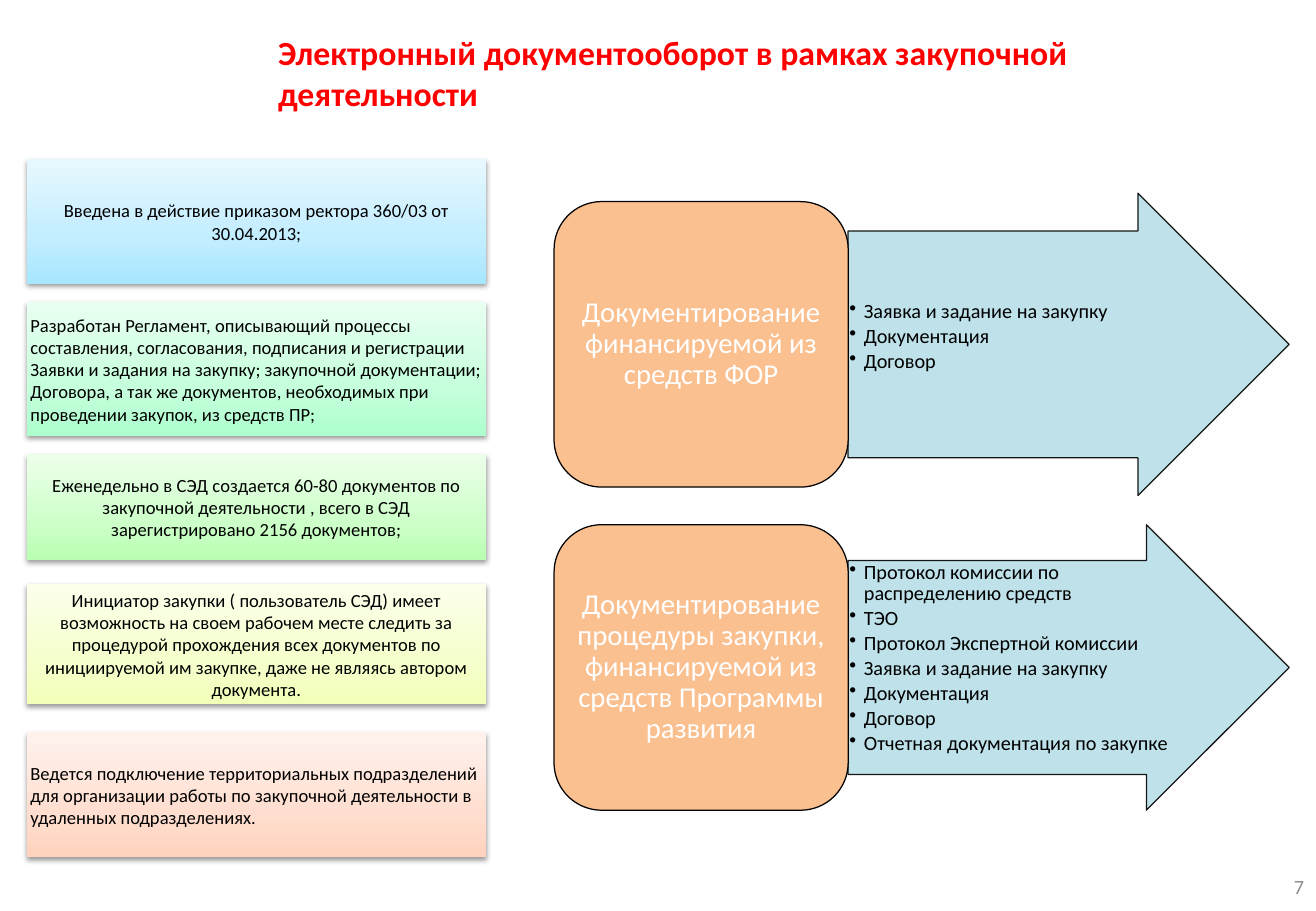
from dataclasses import dataclass

from lxml.etree import SubElement
from pptx import Presentation
from pptx.dml.color import RGBColor
from pptx.enum.shapes import MSO_SHAPE
from pptx.enum.text import MSO_ANCHOR, PP_ALIGN
from pptx.oxml.ns import qn
from pptx.util import Inches, Pt


@dataclass(frozen=True)
class Theme:
    font: str = "Calibri"
    title: str = "FF0000"
    ink: str = "000000"
    number: str = "8C8C8C"
    stage: str = "FAC090"
    stage_text: str = "FFFFFF"
    arrow: str = "B7DEE8"
    title_size: float = 20
    stage_size: float = 17
    small_size: float = 12
    card_size: float = 11


THEME = Theme()

# Gradient colours from the bottom of a card to its top
BLUE = ("A7E6FF", "C1EDFF", "E7F8FF")
MINT = ("ADFFCD", "C5FFDB", "E9FFF1")
GREEN = ("B9FFB2", "CDFFC9", "ECFFEA")
YELLOW = ("F1FFB8", "F5FFCC", "FBFFEC")
PEACH = ("FFD2BD", "FFDED0", "FFF2ED")

# Top, height, gradient, alignment, paragraphs
CARDS = [
    (1.31, 1.03, BLUE, PP_ALIGN.CENTER,
     ["Введена в действие приказом ректора 360/03 от 30.04.2013;"]),
    (2.49, 1.1, MINT, PP_ALIGN.LEFT,
     ["Разработан Регламент, описывающий процессы составления, согласования, "
      "подписания и регистрации Заявки и задания на закупку; закупочной документации;",
      "Договора, а так же документов, необходимых при проведении закупок, из средств ПР;"]),
    (3.74, 0.87, GREEN, PP_ALIGN.CENTER,
     ["Еженедельно в СЭД создается 60-80 документов по закупочной деятельности , "
      "всего в СЭД зарегистрировано 2156 документов;"]),
    (4.81, 0.99, YELLOW, PP_ALIGN.CENTER,
     ["Инициатор закупки ( пользователь СЭД) имеет возможность на своем рабочем месте "
      "следить за процедурой прохождения всех документов по инициируемой им закупке, "
      "даже не являясь автором документа."]),
    (6.03, 1.03, PEACH, PP_ALIGN.LEFT,
     ["Ведется подключение территориальных подразделений для организации работы по "
      "закупочной деятельности в удаленных подразделениях."]),
]

# Arrow top, arrow height, space above the list, stage text, documents
STAGES = [
    (1.59, 2.49, 0.58, "Документирование финансируемой из средств ФОР",
     ["Заявка и задание на закупку", "Документация", "Договор"]),
    (4.32, 2.35, 0.01,
     "Документирование процедуры закупки, финансируемой из средств Программы развития",
     ["Протокол комиссии по распределению средств", "ТЭО",
      "Протокол Экспертной комиссии", "Заявка и задание на закупку",
      "Документация", "Договор", "Отчетная документация по закупке"]),
]


def write(shape, paragraphs, *, size, color, bold=False, align=PP_ALIGN.LEFT,
          anchor=MSO_ANCHOR.MIDDLE, insets=(0.1, 0.05, 0.1, 0.05),
          spacing=None, after=None, bullet_indent=None):
    frame = shape.text_frame
    frame.word_wrap = True
    frame.vertical_anchor = anchor
    (frame.margin_left, frame.margin_top,
     frame.margin_right, frame.margin_bottom) = map(Inches, insets)
    for index, text in enumerate(paragraphs):
        paragraph = frame.add_paragraph() if index else frame.paragraphs[0]
        if bullet_indent:
            properties = paragraph._p.get_or_add_pPr()
            properties.set("marL", str(Inches(bullet_indent)))
            properties.set("indent", str(-Inches(bullet_indent)))
            SubElement(properties, qn("a:buChar"), char="•")
        paragraph.alignment = align
        if spacing:
            paragraph.line_spacing = spacing
        if after:
            paragraph.space_after = Pt(after)
        run = paragraph.add_run()
        run.text = text
        run.font.name = THEME.font
        run.font.size = Pt(size)
        run.font.bold = bold
        run.font.color.rgb = RGBColor.from_string(color)


def add_text(slide, box, text, **style):
    write(slide.shapes.add_textbox(*map(Inches, box)), [text], **style)


def add_block(slide, kind, box, fill=None):
    block = slide.shapes.add_shape(kind, *map(Inches, box))
    block.shadow.inherit = False
    if fill:
        block.fill.solid()
        block.fill.fore_color.rgb = RGBColor.from_string(fill)
        block.line.color.rgb = RGBColor.from_string(THEME.ink)
        block.line.width = Pt(0.75)
    else:
        block.fill.background()
        block.line.fill.background()
    return block


def add_color(parent, color, alpha=None):
    element = SubElement(parent, qn("a:srgbClr"), val=color)
    if alpha:
        SubElement(element, qn("a:alpha"), val=str(alpha * 1000))


def add_card(slide, box, gradient, align, paragraphs):
    card = add_block(slide, MSO_SHAPE.RECTANGLE, box)
    properties = card._element.spPr

    # Three-stop gradient rising from the bottom
    no_fill = properties.find(qn("a:noFill"))
    fill = SubElement(properties, qn("a:gradFill"), rotWithShape="1")
    stops = SubElement(fill, qn("a:gsLst"))
    for position, color in zip((0, 35, 100), gradient):
        add_color(SubElement(stops, qn("a:gs"), pos=str(position * 1000)), color)
    SubElement(fill, qn("a:lin"), ang=str(270 * 60000), scaled="1")
    properties.replace(no_fill, fill)

    # Soft shadow straight below
    shadow = SubElement(properties.find(qn("a:effectLst")), qn("a:outerShdw"),
                        blurRad=str(Pt(3.1)), dist=str(Pt(1.6)),
                        dir=str(90 * 60000), rotWithShape="0")
    add_color(shadow, THEME.ink, 38)

    write(card, paragraphs, size=THEME.card_size, color=THEME.ink, align=align,
          insets=(0.03,) * 4)


def add_stage(slide, box, list_gap, stage_text, documents):
    left, top, width, height = box
    stage_width, stage_height = 2.42, 2.35

    # Arrow with the list of documents
    arrow = add_block(slide, MSO_SHAPE.RIGHT_ARROW,
                      (left + stage_width, top, width - stage_width, height), THEME.arrow)
    arrow.adjustments[0] = 0.75
    arrow.adjustments[1] = 0.5
    for color in arrow._element.spPr.iter(qn("a:srgbClr")):
        SubElement(color, qn("a:alpha"), val="90000")
    write(arrow, documents, size=THEME.small_size, color=THEME.ink,
          anchor=MSO_ANCHOR.TOP, insets=(0.01, list_gap, 0.01, 0.01),
          spacing=0.9, after=1.8, bullet_indent=0.12)

    # Rounded stage block, centred on the arrow
    stage = add_block(slide, MSO_SHAPE.ROUNDED_RECTANGLE,
                      (left, top + (height - stage_height) / 2, stage_width, stage_height),
                      THEME.stage)
    write(stage, [stage_text], size=THEME.stage_size, color=THEME.stage_text,
          align=PP_ALIGN.CENTER, insets=(0.07, 0.04, 0.07, 0.04), spacing=0.9)


def main():
    deck = Presentation()
    deck.slide_width, deck.slide_height = Inches(10.83), Inches(7.5)
    slide = deck.slides.add_slide(deck.slide_layouts[6])

    # Title and slide number
    add_text(slide, (2.19, 0.05, 7.56, 1.27),
             "Электронный документооборот в рамках закупочной деятельности",
             size=THEME.title_size, color=THEME.title, bold=True,
             anchor=MSO_ANCHOR.BOTTOM, insets=(0.1, 0.05, 0.1, 0.39))
    add_text(slide, (8.3, 7.1, 2.53, 0.4), "7", size=THEME.small_size,
             color=THEME.number, align=PP_ALIGN.RIGHT)

    # Stages on the right
    for top, height, *content in STAGES:
        add_stage(slide, (4.56, top, 6.05, height), *content)

    # Cards on the left
    for top, height, *content in CARDS:
        add_card(slide, (0.22, top, 3.78, height), *content)

    deck.save("out.pptx")


if __name__ == "__main__":
    main()
